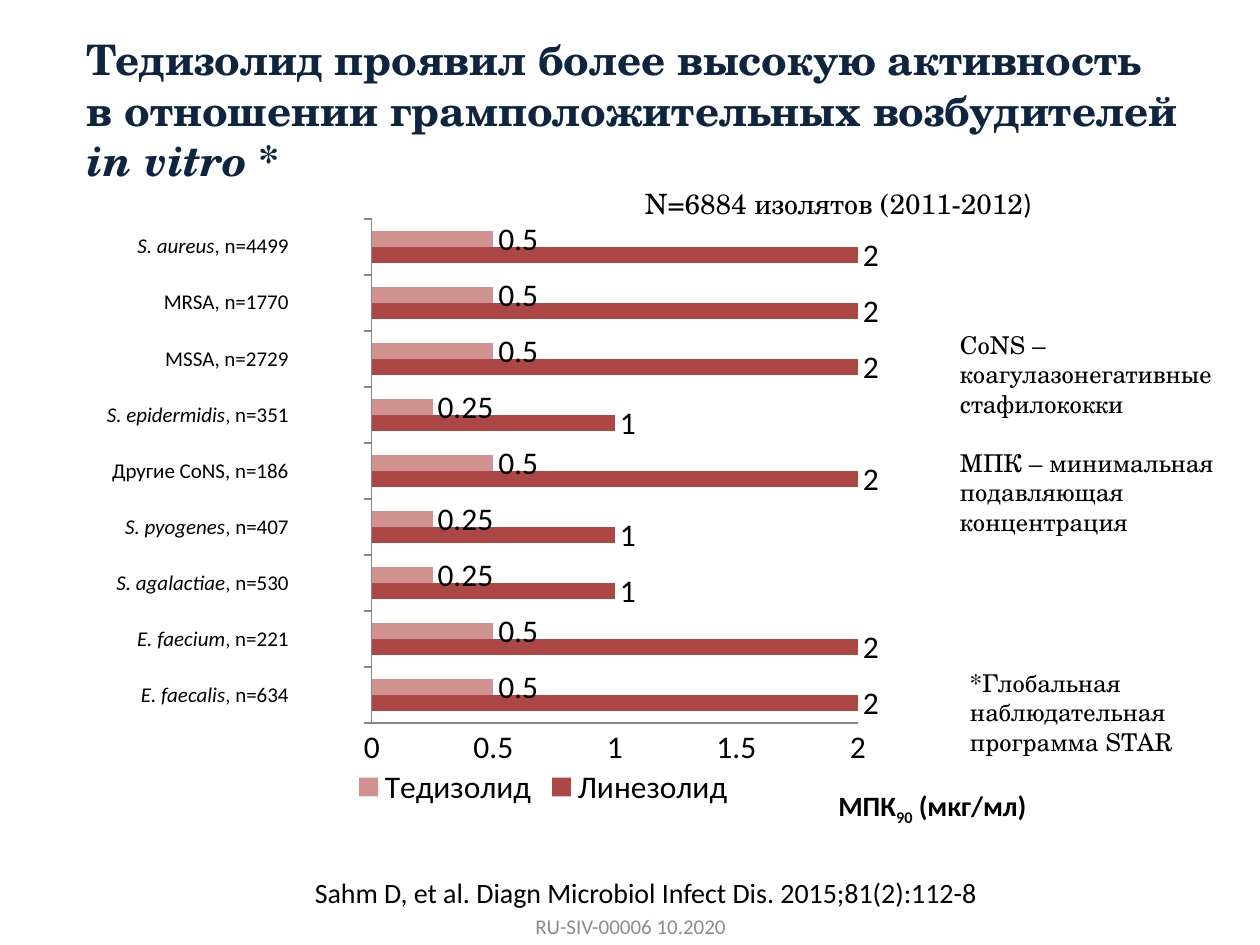
from lxml.etree import SubElement
from pptx import Presentation
from pptx.chart.data import CategoryChartData
from pptx.dml.color import RGBColor
from pptx.enum.chart import XL_CHART_TYPE, XL_LABEL_POSITION, XL_LEGEND_POSITION, XL_TICK_LABEL_POSITION, XL_TICK_MARK
from pptx.enum.shapes import MSO_SHAPE
from pptx.enum.text import MSO_ANCHOR, MSO_AUTO_SIZE, PP_ALIGN
from pptx.oxml.ns import qn
from pptx.util import Inches, Pt

SERIF, SANS = "TeX Gyre Schola", "Calibri"
BLACK, NAVY, GREY, WHITE = "000000", "0F243E", "8C8C8C", "FFFFFF"
TITLE = [("Тедизолид проявил более высокую активность\vв отношении грамположительных возбудителей ", {}),
         ("in vitro ", {"italic": True}), ("*", {})]
ISOLATES = [
    ("S. aureus", ", n=4499", 1.58, 0.5, 2),
    ("", "MRSA, n=1770", 1.34, 0.5, 2),
    ("", "MSSA, n=2729", 1.34, 0.5, 2),
    ("S. epidermidis", ", n=351", 1.83, 0.25, 1),
    ("", "Другие CoNS, n=186", 1.8, 0.5, 2),
    ("S. pyogenes", ", n=407", 1.7, 0.25, 1),
    ("S. agalactiae", ", n=530", 1.74, 0.25, 1),
    ("E. faecium", ", n=221", 1.56, 0.5, 2),
    ("E. faecalis", ", n=634", 1.54, 0.5, 2),
]
SERIES = [("Линезолид", 4, "AB4744"), ("Тедизолид", 3, "D09392")]
LABEL_RIGHT, LABEL_TOP, LABEL_PITCH, LABEL_HEIGHT = 2.39, 1.8, 0.445, 0.34
CHART_BOX = (0.46, 1.55, 8.71, 4.94)
PLOT_LAYOUT = {"layoutTarget": "inner", "xMode": "edge", "yMode": "edge",
               "x": 0.286, "y": 0.038, "w": 0.443, "h": 0.81}
LEGEND_LAYOUT = {"xMode": "edge", "yMode": "edge", "x": 0.265, "y": 0.91}
TEXTS = [
    ((2.4, 6.9, 6.81, 0.37), [[("Sahm D, et al. Diagn Microbiol Infect Dis. 2015;81(2):112-8", {})]],
     {"size": 16}),
    ((5.02, 1.43, 5, 0.37), [[("N=6884 изолятов (2011-2012", {}), (")", {"name": SANS})]],
     {"size": 16, "name": SERIF, "anchor": MSO_ANCHOR.BOTTOM}),
    ((6.02, 6.21, 2.76, 0.38), [[("МПК", {}), ("90", {"baseline": "-25000"}), (" (мкг/мл)", {})]],
     {"size": 16, "bold": True, "align": PP_ALIGN.CENTER}),
    ((7.6, 5.25, 2.4, 0.81), [[("*Глобальная наблюдательная", {})], [("программа STAR", {})]],
     {"size": 14, "name": SERIF}),
    ((7.52, 2.57, 2.28, 1.75), [[("CoNS – коагулазонегативные стафилококки", {})],
                                [("МПК – минимальная подавляющая концентрация", {})]],
     {"size": 14, "name": SERIF, "gap": 17}),
    ((3.42, 7.15, 3.17, 0.4), [[("RU-SIV-00006 10.2020", {})]],
     {"size": 12, "color": GREY, "align": PP_ALIGN.CENTER, "anchor": MSO_ANCHOR.MIDDLE}),
]


def color(value):
    """Turn a hex string into a colour."""
    return RGBColor.from_string(value)


def style_font(font, size, name=SANS, value=BLACK, bold=False):
    """Set size, face, colour and weight of a font."""
    font.size, font.name, font.bold = Pt(size), name, bold
    font.color.rgb = color(value)


def write(shape, paragraphs, size, name=SANS, color=BLACK, bold=False,
          align=PP_ALIGN.LEFT, anchor=MSO_ANCHOR.TOP, gap=0):
    """Fill a shape with paragraphs made of runs."""
    frame = shape.text_frame
    frame.word_wrap, frame.vertical_anchor = True, anchor
    frame.auto_size = MSO_AUTO_SIZE.NONE
    for index, runs in enumerate(paragraphs):
        paragraph = frame.add_paragraph() if index else frame.paragraphs[0]
        paragraph.alignment = align
        paragraph.space_before = Pt(gap if index else 0)
        style_font(paragraph.font, size, name, color, bold)
        for text, changes in runs:
            if "\v" in text:
                first, text = text.split("\v")
                paragraph.add_run().text = first
                paragraph.add_line_break()
            run = paragraph.add_run()
            run.text = text
            for key, value in changes.items():
                if key == "baseline":
                    run.font._element.set(key, value)
                else:
                    setattr(run.font, key, value)


def place(parent, values):
    """Give a chart part a manual layout."""
    layout = parent.get_or_add_layout() if hasattr(parent, "get_or_add_layout") else parent.find(qn("c:layout"))
    if layout is None:
        layout = SubElement(parent, qn("c:layout"))
        parent.remove(layout)
        parent.insert(0, layout)
    manual = SubElement(layout, qn("c:manualLayout"))
    for key, value in values.items():
        SubElement(manual, qn("c:" + key)).set("val", str(value))


def add_chart(slide):
    """Add the clustered bars of both drugs."""
    data = CategoryChartData()
    rows = ISOLATES[::-1]
    data.categories = [str(number + 1) for number in range(len(rows))]
    for name, column, _ in SERIES:
        data.add_series(name, [row[column] for row in rows])
    chart = slide.shapes.add_chart(XL_CHART_TYPE.BAR_CLUSTERED, *map(Inches, CHART_BOX), data).chart
    style_font(chart.font, 18)
    chart.has_title = False
    chart.has_legend = True
    chart.legend.position = XL_LEGEND_POSITION.BOTTOM
    chart.legend.include_in_layout = False
    place(chart.legend._element, LEGEND_LAYOUT)
    place(chart._chartSpace.chart.plotArea, PLOT_LAYOUT)
    plot = chart.plots[0]
    plot.gap_width, plot.overlap, plot.vary_by_categories = 150, 0, False
    for series, (_, _, fill) in zip(plot.series, SERIES):
        series.format.fill.solid()
        series.format.fill.fore_color.rgb = color(fill)
        series.data_labels.show_value = True
        series.data_labels.position = XL_LABEL_POSITION.OUTSIDE_END
    categories, values = chart.category_axis, chart.value_axis
    categories.tick_label_position = XL_TICK_LABEL_POSITION.NONE
    categories.major_tick_mark = XL_TICK_MARK.OUTSIDE
    values.major_tick_mark = XL_TICK_MARK.NONE
    values.minimum_scale, values.maximum_scale, values.major_unit = 0, 2, 0.5
    values.has_major_gridlines = False
    values.tick_labels.number_format = "General"
    values.tick_labels.number_format_is_linked = False
    for axis in (categories, values):
        axis.format.line.color.rgb = color("868686")
        axis.format.line.width = Pt(0.75)


def add_isolate_labels(slide):
    """Add one white label beside each pair of bars."""
    for row, (species, rest, width, _, _) in enumerate(ISOLATES):
        box = (LABEL_RIGHT - width, LABEL_TOP + row * LABEL_PITCH, width, LABEL_HEIGHT)
        label = slide.shapes.add_shape(MSO_SHAPE.RECTANGLE, *map(Inches, box))
        label.shadow.inherit = False
        label.fill.solid()
        label.fill.fore_color.rgb = color(WHITE)
        label.line.fill.background()
        runs = [(species, {"italic": True})] if species else []
        write(label, [runs + [(rest, {})]], 12, align=PP_ALIGN.RIGHT)


def main():
    """Build and save the slide."""
    presentation = Presentation()
    presentation.slide_width, presentation.slide_height = Inches(10), Inches(7.5)
    slide = presentation.slides.add_slide(presentation.slide_layouts[5])
    title = slide.shapes.title
    title.left, title.top, title.width, title.height = map(Inches, (0.59, 0.36, 9.21, 1.02))
    write(title, [TITLE], 24, SERIF, NAVY, True, anchor=MSO_ANCHOR.MIDDLE)
    add_chart(slide)
    add_isolate_labels(slide)
    for box, paragraphs, style in TEXTS:
        write(slide.shapes.add_textbox(*map(Inches, box)), paragraphs, **style)
    presentation.save("out.pptx")


if __name__ == "__main__":
    main()
